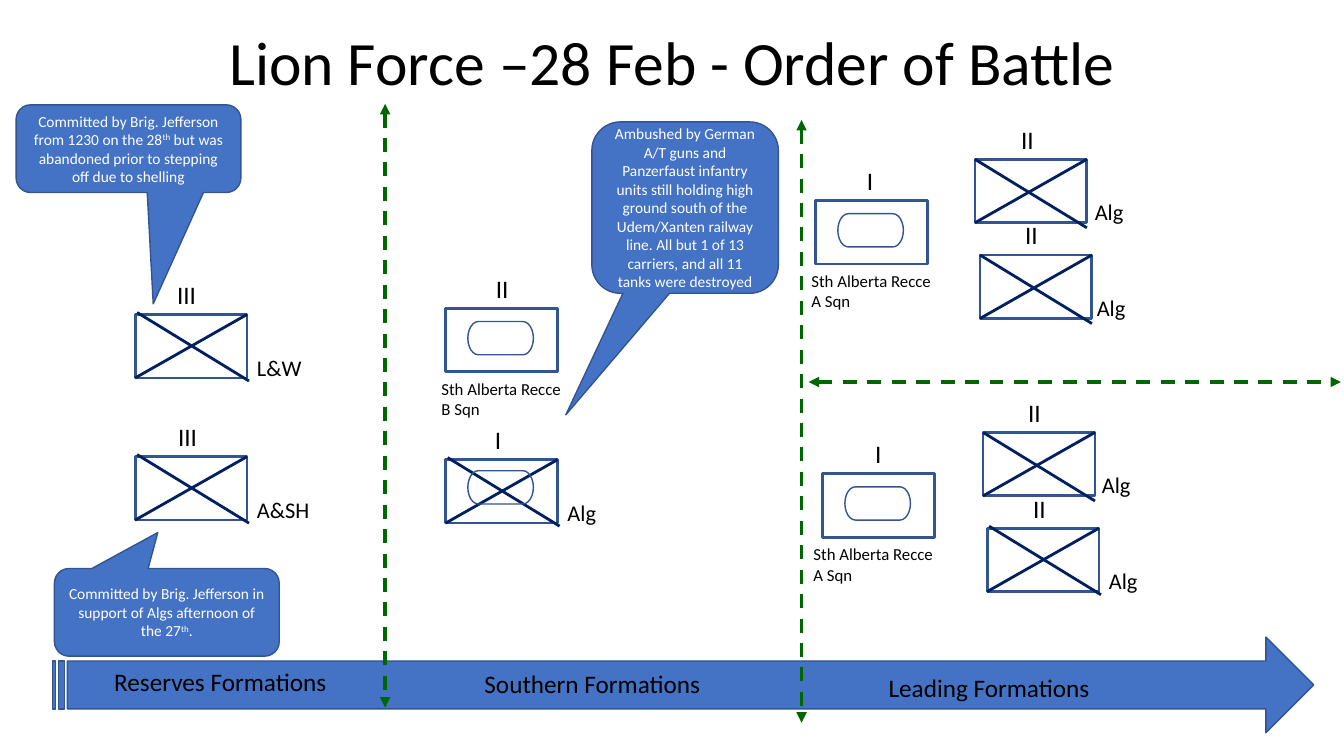
from pptx import Presentation, util as u
from pptx.dml.color import RGBColor
from pptx.enum import dml, shapes, text
from pptx.oxml.ns import qn
from lxml import etree

COLS, ROWS = 13.33, 7.5
BOX_W, BOX_H = 1.11, 0.63
SHAPE = shapes.MSO_SHAPE
CENTER, LEFT = text.PP_ALIGN.CENTER, text.PP_ALIGN.LEFT


def color(value):
    return RGBColor.from_string(value)


class Board:
    font = "Calibri"
    ink, paper = "000000", "FFFFFF"
    fill, edge, cross, divide = "4472C4", "325491", "002060", "006600"

    def __init__(self, prs):
        self.col = prs.slide_width / COLS
        self.row = prs.slide_height / ROWS
        self.slide = prs.slides.add_slide(prs.slide_layouts[5])

    def grid(self, x, y, w, h):
        return [round(n) for n in (x * self.col, y * self.row, w * self.col, h * self.row)]

    def style(self, p, size, ink, align):
        p.alignment = align
        p.font.name, p.font.size = self.font, u.Pt(size)
        p.font.color.rgb = color(ink)

    def title(self, words, *place):
        sp = self.slide.shapes.title
        sp.left, sp.top, sp.width, sp.height = self.grid(*place)
        tf = sp.text_frame
        tf.text = words
        tf.vertical_anchor = text.MSO_ANCHOR.MIDDLE
        p = tf.paragraphs[0]
        self.style(p, 44, self.ink, CENTER)
        p.line_spacing = 0.9

    def label(self, words, x, y, w, h, size=18, align=CENTER):
        tf = self.slide.shapes.add_textbox(*self.grid(x, y, w, h)).text_frame
        tf.word_wrap = True
        tf.auto_size = text.MSO_AUTO_SIZE.SHAPE_TO_FIT_TEXT
        tf.text = words
        for p in tf.paragraphs:
            self.style(p, size, self.ink, align)

    def shape(self, kind, x, y, w, h, width=1, fill=None):
        sp = self.slide.shapes.add_shape(kind, *self.grid(x, y, w, h))
        sp.shadow.inherit = False
        if fill:
            sp.fill.solid()
            sp.fill.fore_color.rgb = color(fill)
        else:
            sp.fill.background()
        sp.line.color.rgb = color(self.edge)
        sp.line.width = u.Pt(width)
        return sp

    def line(self, x1, y1, x2, y2, ink, width):
        ends = self.grid(x1, y1, x2, y2)
        sp = self.slide.shapes.add_connector(shapes.MSO_CONNECTOR.STRAIGHT, *ends)
        sp.line.color.rgb = color(ink)
        sp.line.width = u.Pt(width)
        etree.SubElement(sp._element.spPr, qn("a:effectLst"))
        return sp

    def divider(self, *ends):
        sp = self.line(*ends, self.divide, 2.5)
        sp.line.dash_style = dml.MSO_LINE.DASH
        ln = sp._element.spPr.find(qn("a:ln"))
        for end in ("a:headEnd", "a:tailEnd"):
            etree.SubElement(ln, qn(end), type="triangle")

    def box(self, x, y, mark, mark_x):
        self.label(mark, mark_x, y - 0.4, 1.52, 0.4)
        self.shape(SHAPE.RECTANGLE, x, y, BOX_W, BOX_H, 2)

    def track(self, x, y):
        self.shape(SHAPE.FLOWCHART_TERMINATOR, x + 0.22, y, 0.65, 0.33)

    def infantry(self, x, y, mark, mark_x, name, name_x, slip):
        self.box(x, y, mark, mark_x)
        self.line(x + slip, y - slip, x + slip + 1.11, y - slip + 0.68, self.cross, 2)
        self.line(x, y + BOX_H, x + BOX_W, y, self.cross, 2)
        self.label(name, name_x, y + 0.34, 0.88, 0.37, 16, LEFT)

    def recce(self, x, y, mark, mark_x, squadron, text_x):
        self.box(x, y, mark, mark_x)
        self.track(x, y + 0.13)
        self.label(f"Sth Alberta Recce\n{squadron}", text_x, y + 0.65, 1.53, 0.74, 12, LEFT)

    def callout(self, place, pointer, *parts):
        sp = self.shape(SHAPE.ROUNDED_RECTANGULAR_CALLOUT, *place, fill=self.fill)
        for i, value in enumerate(pointer):
            sp.adjustments[i] = value
        tf = sp.text_frame
        tf.word_wrap = True
        tf.vertical_anchor = text.MSO_ANCHOR.MIDDLE
        p = tf.paragraphs[0]
        self.style(p, 11, self.paper, CENTER)
        for part in parts:
            r = p.add_run()
            r.text = part
            if part == "th":
                r.font._element.set("baseline", "30000")


INFANTRY = [
    (9.75, 4.29, "II", 9.5, "Alg", 10.83, 0),
    (9.79, 5.24, "II", 9.55, "Alg", 10.9, 0.02),
    (9.67, 1.58, "II", 9.43, "Alg", 10.76, 0),
    (9.72, 2.53, "II", 9.47, "Alg", 10.78, 0),
    (4.42, 4.56, "I", 4.18, "Alg", 5.53, 0.02),
    (1.34, 4.53, "III", 1.1, "A&SH", 2.45, 0.02),
    (1.34, 3.12, "III", 1.09, "L&W", 2.45, 0.02),
]
RECCE = [
    (8.16, 4.7, "I", 7.95, "A Sqn", 7.97),
    (8.09, 1.99, "I", 7.87, "A Sqn", 7.95),
    (4.42, 3.06, "II", 4.22, "B Sqn", 4.28),
]
DIVIDERS = [(7.95, 1.19, 7.95, 7.17), (8.02, 3.79, 13.3, 3.79), (3.82, 1.03, 3.82, 7.02)]
PHASES = [
    ("Leading Formations", 8.18, 6.62, 3.26),
    ("Southern Formations", 3.77, 6.58, 4.21),
    ("Reserves Formations", 0.08, 6.56, 4.21),
]
CALLOUTS = [
    ((5.87, 1.21, 1.85, 1.7), (-0.64, 1.21),
     "Ambushed by German A/T guns and Panzerfaust infantry units still holding high ground "
     "south of the Udem/Xanten railway line. All but 1 of 13 carriers, and all 11 tanks "
     "were destroyed"),
    ((0.54, 5.64, 2.23, 0.87), (-0.04, -0.91),
     "Committed by Brig. Jefferson in support of Algs afternoon of the 27", "th", "."),
    ((0.16, 1.04, 2.23, 0.87), (0.11, 1.77),
     "Committed by Brig. Jefferson from 1230 on the 28", "th",
     " but was abandoned prior to stepping off due to shelling"),
]


def main():
    prs = Presentation()
    prs.slide_width, prs.slide_height = u.Inches(COLS), u.Inches(ROWS)
    board = Board(prs)
    board.title("Lion Force –28 Feb - Order of Battle", 0.92, 0.12, 11.5, 1.06)
    board.shape(SHAPE.STRIPED_RIGHT_ARROW, 0.52, 6.32, 12.51, 0.95, fill=board.fill)
    for unit in RECCE:
        board.recce(*unit)
    for unit in INFANTRY:
        board.infantry(*unit)
    board.track(4.42, 4.67)
    for ends in DIVIDERS:
        board.divider(*ends)
    for words, x, y, w in PHASES:
        board.label(words, x, y, w, 0.4)
    for note in CALLOUTS:
        board.callout(*note)
    prs.save("out.pptx")


if __name__ == "__main__":
    main()
